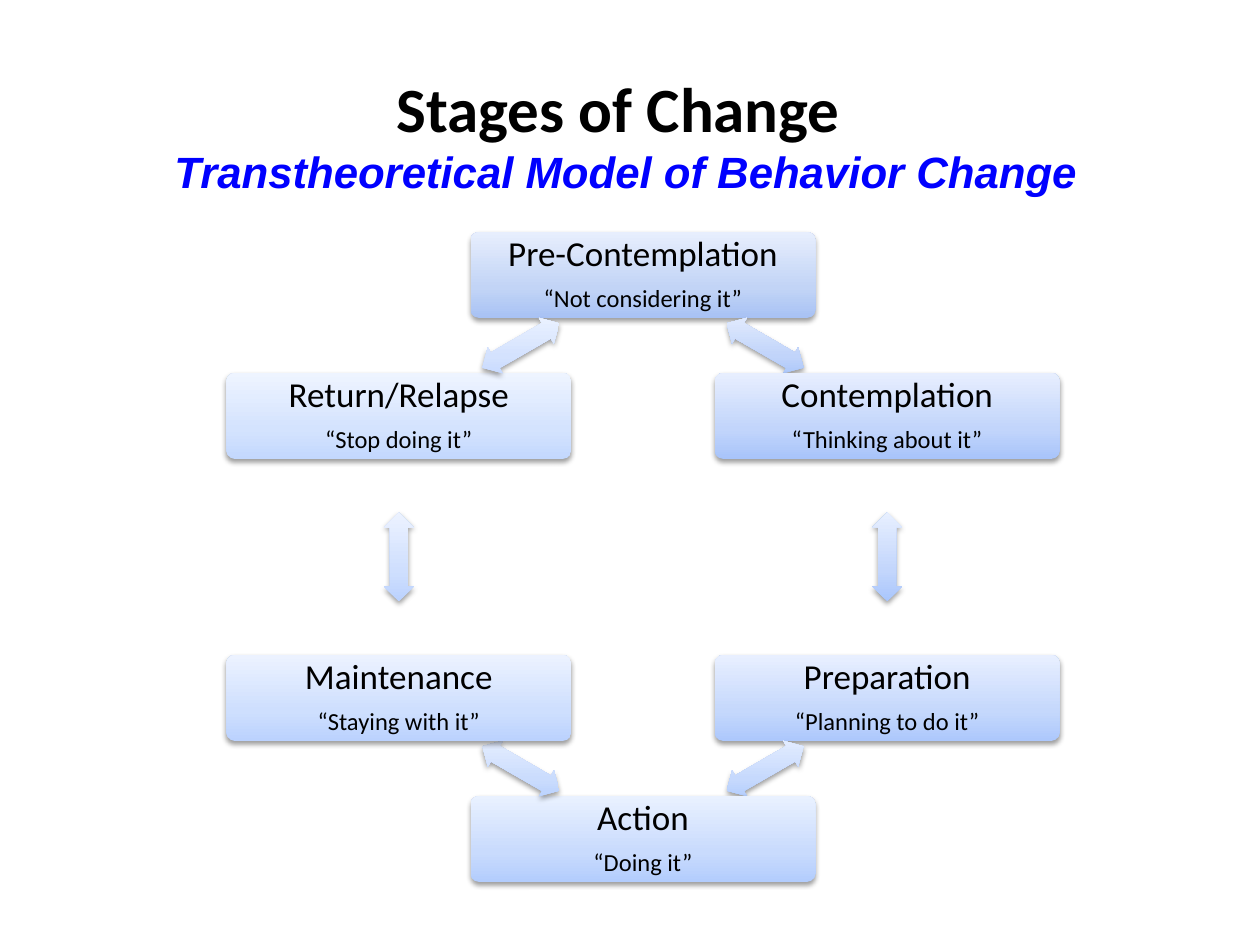
from copy import deepcopy
from dataclasses import dataclass
from math import cos, radians, sin

from lxml import etree
from pptx import Presentation
from pptx.dml.color import RGBColor
from pptx.enum.shapes import MSO_SHAPE
from pptx.enum.text import MSO_ANCHOR, PP_ALIGN
from pptx.oxml.ns import qn
from pptx.util import Emu, Pt

BOX, ARROW = MSO_SHAPE.ROUNDED_RECTANGLE, MSO_SHAPE.LEFT_RIGHT_ARROW
CENTER, MIDDLE, TOP = PP_ALIGN.CENTER, MSO_ANCHOR.MIDDLE, MSO_ANCHOR.TOP
PX = 914400 / 126


@dataclass(frozen=True)
class Theme:
    font: str = "Calibri"
    accent_font: str = "Arial"
    text: str = "000000"
    accent: str = "0000FF"
    title_size: int = 36
    subtitle_size: int = 25
    stage_size: int = 20
    quote_size: int = 14
    # Gradient stops as percent positions, bottom to top
    stops: tuple = (0, 35, 100)


THEME = Theme()

# Ring of stages: centre, radius and element sizes in px
CX, CY, RADIUS = 643, 557, 282
BOX_SIZE, ARROW_SIZE = (345, 86), (89, 30)
STEP = 60

# Stage, quote, box gradient, gradient of the arrow to the next stage
STAGES = [
    ("Pre-Contemplation", "“Not considering it”",
     ("A8C2F4", "C2D4F6", "E7EEFD"), ("A5C3FA", "C1D4FA", "E6EEFE")),
    ("Contemplation", "“Thinking about it”",
     ("A8C4FA", "C2D5FB", "E7EEFE"), ("A9C6FC", "C3D6FC", "E7EFFF")),
    ("Preparation", "“Planning to do it”",
     ("ADC8FC", "C5D8FC", "E8EFFF"), ("AECAFD", "C6D9FD", "E8F0FF")),
    ("Action", "“Doing it”",
     ("B3CDFD", "C9DBFD", "E9F1FF"), ("B4CEFE", "CADCFD", "EAF1FF")),
    ("Maintenance", "“Staying with it”",
     ("BBD2FE", "CEDFFE", "ECF2FF"), ("BBD2FE", "CFDFFE", "ECF2FF")),
    ("Return/Relapse", "“Stop doing it”",
     ("C3D8FE", "D4E3FE", "EEF4FF"), ("C3D7FF", "D4E2FE", "EEF4FF")),
]


def px(n):
    return Emu(round(n * PX))


def set_attrs(obj, **values):
    for name, value in values.items():
        setattr(obj, name, value)


def ring_point(angle, radius):
    """Point on the ring, with the angle clockwise from the top."""
    a = radians(angle)
    return CX + radius * sin(a), CY - radius * cos(a)


def set_gradient(s, colors):
    s.fill.gradient()
    s.fill.gradient_angle = 90
    grad = s._element.spPr.find(qn("a:gradFill"))
    grad.set("rotWithShape", "0")
    stops = grad.find(qn("a:gsLst"))
    stops.insert(1, deepcopy(stops[0]))
    for stop, gs, pos, color in zip(s.fill.gradient_stops, stops, THEME.stops, colors):
        gs.set("pos", str(pos * 1000))
        stop.color.rgb = RGBColor.from_string(color)


def set_shadow(s):
    s.shadow.inherit = False
    effects = s._element.spPr.find(qn("a:effectLst"))
    shadow = etree.SubElement(effects, qn("a:outerShdw"), blurRad=str(Pt(3.1)),
                              dist=str(Pt(1.6)), dir="5400000", rotWithShape="0")
    color = etree.SubElement(shadow, qn("a:srgbClr"), val="000000")
    etree.SubElement(color, qn("a:alpha"), val="38000")


def add_ring_shape(slide, kind, center, size, colors):
    (x, y), (w, h) = center, size
    s = slide.shapes.add_shape(kind, px(x - w / 2), px(y - h / 2), px(w), px(h))
    set_gradient(s, colors)
    s.line.fill.background()
    set_shadow(s)
    return s


def add_line(p, text, size, color=THEME.text, name=THEME.font, **style):
    p.alignment = CENTER
    r = p.add_run()
    r.text = text
    set_attrs(r.font, size=Pt(size), name=name, **style)
    r.font.color.rgb = RGBColor.from_string(color)


def add_stage(slide, angle, stage, quote, colors):
    s = add_ring_shape(slide, BOX, ring_point(angle, RADIUS), BOX_SIZE, colors)
    s.adjustments[0] = 0.1
    tf = s.text_frame
    inset = px(10)
    set_attrs(tf, word_wrap=True, vertical_anchor=MIDDLE, margin_left=inset,
              margin_right=inset, margin_top=inset, margin_bottom=inset)
    lines = [(tf.paragraphs[0], stage, THEME.stage_size),
             (tf.add_paragraph(), quote, THEME.quote_size)]
    for p, text, size in lines:
        add_line(p, text, size)
        set_attrs(p, line_spacing=0.9, space_after=Pt(size * 0.35))


def add_arrow(slide, angle, colors):
    center = ring_point(angle, RADIUS * cos(radians(STEP / 2)))
    s = add_ring_shape(slide, ARROW, center, ARROW_SIZE, colors)
    s.adjustments[0], s.adjustments[1] = 0.6, 0.5
    s.rotation = angle


def add_title(slide):
    tf = slide.shapes.add_textbox(px(95), px(63), px(1061), px(147)).text_frame
    set_attrs(tf, word_wrap=False, vertical_anchor=TOP)
    add_line(tf.paragraphs[0], "Stages of Change ", THEME.title_size, bold=True)
    add_line(tf.add_paragraph(), "Transtheoretical Model of Behavior Change",
             THEME.subtitle_size, THEME.accent, THEME.accent_font,
             bold=True, italic=True)


def main():
    prs = Presentation()
    set_attrs(prs, slide_width=px(1260), slide_height=px(945))
    slide = prs.slides.add_slide(prs.slide_layouts[6])

    # Cycle of stages, each followed by the arrow to the next
    for i, (stage, quote, box_colors, arrow_colors) in enumerate(STAGES):
        add_stage(slide, i * STEP, stage, quote, box_colors)
        add_arrow(slide, i * STEP + STEP / 2, arrow_colors)

    # Heading
    add_title(slide)
    prs.save("out.pptx")


if __name__ == "__main__":
    main()
